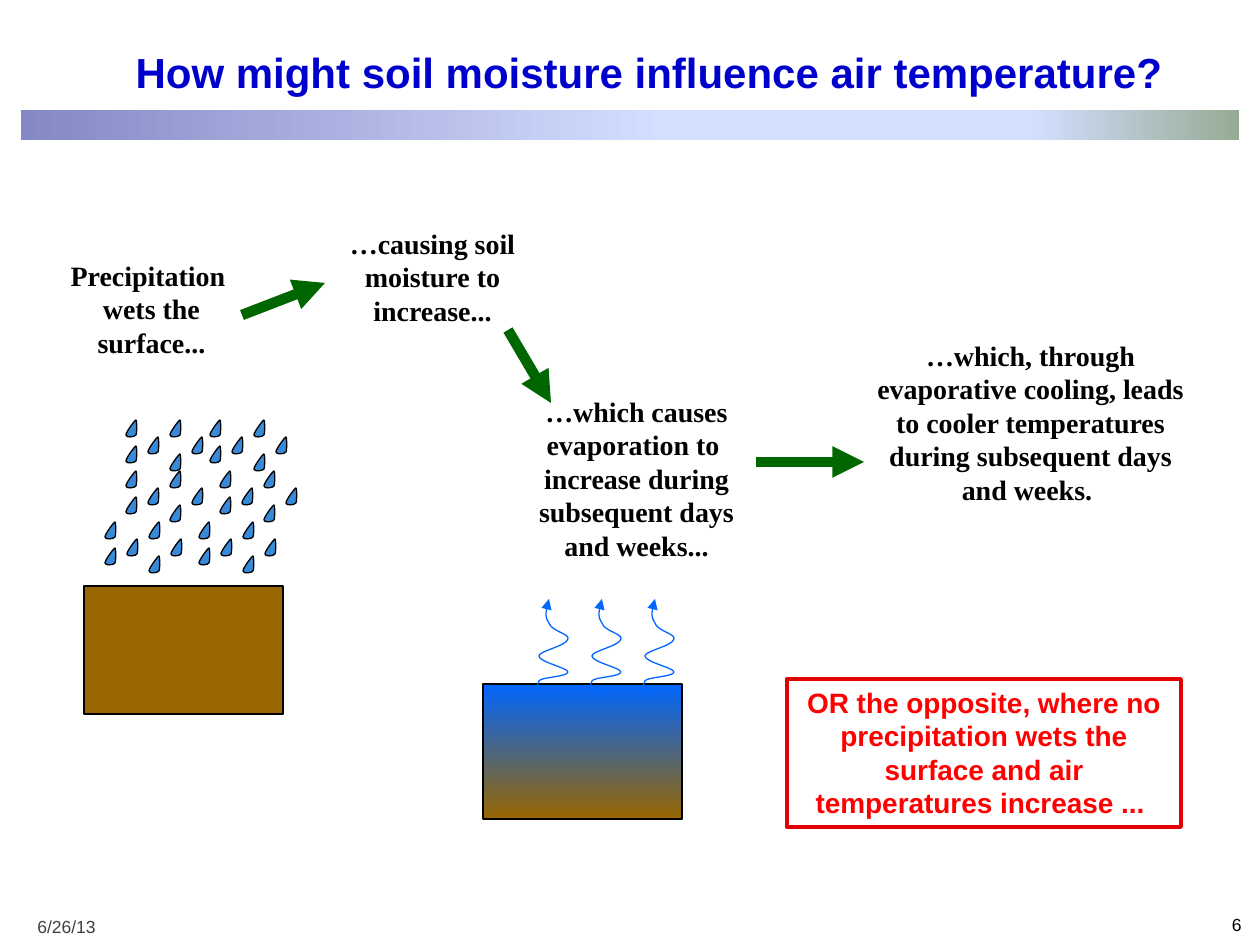
from copy import deepcopy

from lxml import etree
from pptx import Presentation
from pptx import util as u
from pptx.dml.color import RGBColor
from pptx.enum import shapes, text
from pptx.oxml import ns

PX = u.Inches(1) / 126

BLACK = RGBColor(0x00, 0x00, 0x00)
GRAY = RGBColor(0x40, 0x40, 0x40)
TITLE_BLUE = RGBColor(0x00, 0x00, 0xCC)
WATER = RGBColor(0x00, 0x66, 0xFF)
SOIL = RGBColor(0x99, 0x66, 0x00)
RAIN = RGBColor(0x39, 0x89, 0xD9)
GREEN = RGBColor(0x00, 0x66, 0x00)
RED = RGBColor(0xFF, 0x00, 0x00)
DARK_RED = RGBColor(0xE2, 0x00, 0x00)
VIOLET = RGBColor(0x84, 0x88, 0xC4)
PALE_BLUE = RGBColor(0xD4, 0xDE, 0xFF)
SAGE = RGBColor(0x96, 0xAB, 0x94)

LEFT, CENTER, RIGHT = text.PP_ALIGN.LEFT, text.PP_ALIGN.CENTER, text.PP_ALIGN.RIGHT
BAR_STOPS = [(0, VIOLET), (0.53, PALE_BLUE), (0.83, PALE_BLUE), (1, SAGE)]

# Each outline is a start point followed by (control, control, end) triples.
DROP = [(10, 0),
        (9, 0), (0, 12), (0, 15),
        (0, 18), (9, 17), (10, 15),
        (11, 14), (11, 0), (10, 0)]
STEAM = [(14, 98),
         (6, 92), (0, 86), (4, 82),
         (6, 78), (33, 78), (33, 73),
         (33, 69), (4, 63), (4, 57),
         (4, 52), (32, 47), (33, 40),
         (35, 35), (16, 32), (14, 24),
         (10, 18), (11, 9), (14, 0)]

CLUSTERS = [(105, 522), (199, 522), (126, 471), (220, 471), (210, 420), (126, 420)]
CLUSTER_DROPS = [(0, 0), (22, 17), (44, 34), (66, 17), (0, 26), (44, 0)]

CAPTIONS = [
    ("Precipitation \nwets the\nsurface...", (57, 252, 189, 115), False),
    ("…causing soil\nmoisture to\nincrease...", (336, 220, 193, 115), False),
    ("…which causes\nevaporation to \nincrease during\nsubsequent days\nand weeks...",
     (525, 388, 223, 183), False),
    ("…which, through evaporative cooling, leads to cooler temperatures "
     "during subsequent days and weeks. ", (864, 332, 333, 217), True),
]
ARROWS = [(242, 315, 325, 283), (508, 330, 551, 403), (756, 462, 864, 462)]


def px(*lengths):
    return [u.Emu(round(length * PX)) for length in lengths]


def write(shape, words, size, color, font="Arial", bold=False, align=LEFT, wrap=False):
    frame = shape.text_frame
    frame.text = words
    frame.word_wrap = wrap
    frame.auto_size = text.MSO_AUTO_SIZE.NONE
    frame.vertical_anchor = text.MSO_ANCHOR.TOP
    for para in frame.paragraphs:
        para.alignment = align
        for span in para.runs:
            span.font.name = font
            span.font.size = u.Pt(size)
            span.font.bold = bold
            span.font.color.rgb = color


def add_text(page, words, box, size, color, **style):
    write(page.shapes.add_textbox(*px(*box)), words, size, color, **style)


def outline(shape, color, width):
    shape.line.color.rgb = color
    shape.line.width = u.Pt(width)


def add_rect(parent, box):
    rect = parent.shapes.add_shape(shapes.MSO_SHAPE.RECTANGLE, *px(*box))
    rect.shadow.inherit = False
    return rect


def fill_gradient(shape, stops, angle):
    shape.fill.gradient()
    shape.fill.gradient_angle = angle
    stop_list = shape._element.spPr.find(".//" + ns.qn("a:gsLst"))
    while len(stop_list) < len(stops):
        stop_list.append(deepcopy(stop_list[0]))
    for stop, (position, color) in zip(shape.fill.gradient_stops, stops):
        stop.position = position
        stop.color.rgb = color


def add_arrowhead(line):
    border = line._element.spPr.find(ns.qn("a:ln"))
    etree.SubElement(border, ns.qn("a:tailEnd"), type="triangle")


def bend_segments(curve):
    """Turn each three straight segments into one cubic Bezier segment."""
    segments = list(curve._element.iter(ns.qn("a:lnTo")))
    for first in range(0, len(segments), 3):
        bend = etree.Element(ns.qn("a:cubicBezTo"))
        segments[first].addprevious(bend)
        for segment in segments[first:first + 3]:
            bend.append(segment[0])
            segment.getparent().remove(segment)


def add_curve(group, outline_points, left, top, line_color, close):
    start, *rest = [px(left + x, top + y) for x, y in outline_points]
    builder = group.shapes.build_freeform(*start)
    builder.add_line_segments(rest, close=close)
    curve = builder.convert_to_shape()
    bend_segments(curve)
    curve.shadow.inherit = False
    outline(curve, line_color, 0.75)
    return curve


def add_rain(page):
    group = page.shapes.add_group_shape()
    soil = add_rect(group, (84, 586, 199, 128))
    soil.fill.solid()
    soil.fill.fore_color.rgb = SOIL
    outline(soil, BLACK, 0.75)
    for left, top in CLUSTERS:
        for dx, dy in CLUSTER_DROPS:
            drop = add_curve(group, DROP, left + dx, top + dy, BLACK, close=True)
            drop.fill.solid()
            drop.fill.fore_color.rgb = RAIN


def add_evaporation(page):
    group = page.shapes.add_group_shape()
    wet_soil = add_rect(group, (483, 684, 199, 135))
    fill_gradient(wet_soil, [(0, WATER), (1, SOIL)], 270)
    outline(wet_soil, BLACK, 0.75)
    for column in range(3):
        steam = add_curve(group, STEAM, 535 + 53 * column, 599, WATER, close=False)
        steam.fill.background()
        add_arrowhead(steam)


def add_arrow(page, ends):
    arrow = page.shapes.add_connector(shapes.MSO_CONNECTOR.STRAIGHT, *px(*ends))
    outline(arrow, GREEN, 6)
    add_arrowhead(arrow)
    etree.SubElement(arrow._element.spPr, ns.qn("a:effectLst"))


def main():
    deck = Presentation()
    deck.slide_width, deck.slide_height = px(1260, 945)
    page = deck.slides.add_slide(deck.slide_layouts[5])

    bar = add_rect(page, (21, 110, 1218, 30))
    fill_gradient(bar, BAR_STOPS, 0)
    bar.line.fill.background()

    title = page.shapes.title
    title.left, title.top, title.width, title.height = px(123, 40, 1062, 63)
    write(title, "How might soil moisture influence air temperature?", 24, TITLE_BLUE, bold=True)
    add_text(page, "6", (992, 908, 262, 32), 10, BLACK, align=RIGHT, wrap=True)
    add_text(page, "6/26/13", (25, 910, 83, 34), 10, GRAY)

    for words, box, wrap in CAPTIONS:
        add_text(page, words, box, 16, BLACK, font="Times New Roman", bold=True,
                 align=CENTER, wrap=wrap)
    add_rain(page)
    add_evaporation(page)
    for ends in ARROWS:
        add_arrow(page, ends)

    opposite = add_rect(page, (787, 679, 394, 148))
    opposite.fill.background()
    outline(opposite, DARK_RED, 2.25)
    write(opposite, "OR the opposite, where no precipitation wets the surface and air "
          "temperatures increase ... ", 16, RED, bold=True, align=CENTER, wrap=True)

    deck.save("out.pptx")


if __name__ == "__main__":
    main()
